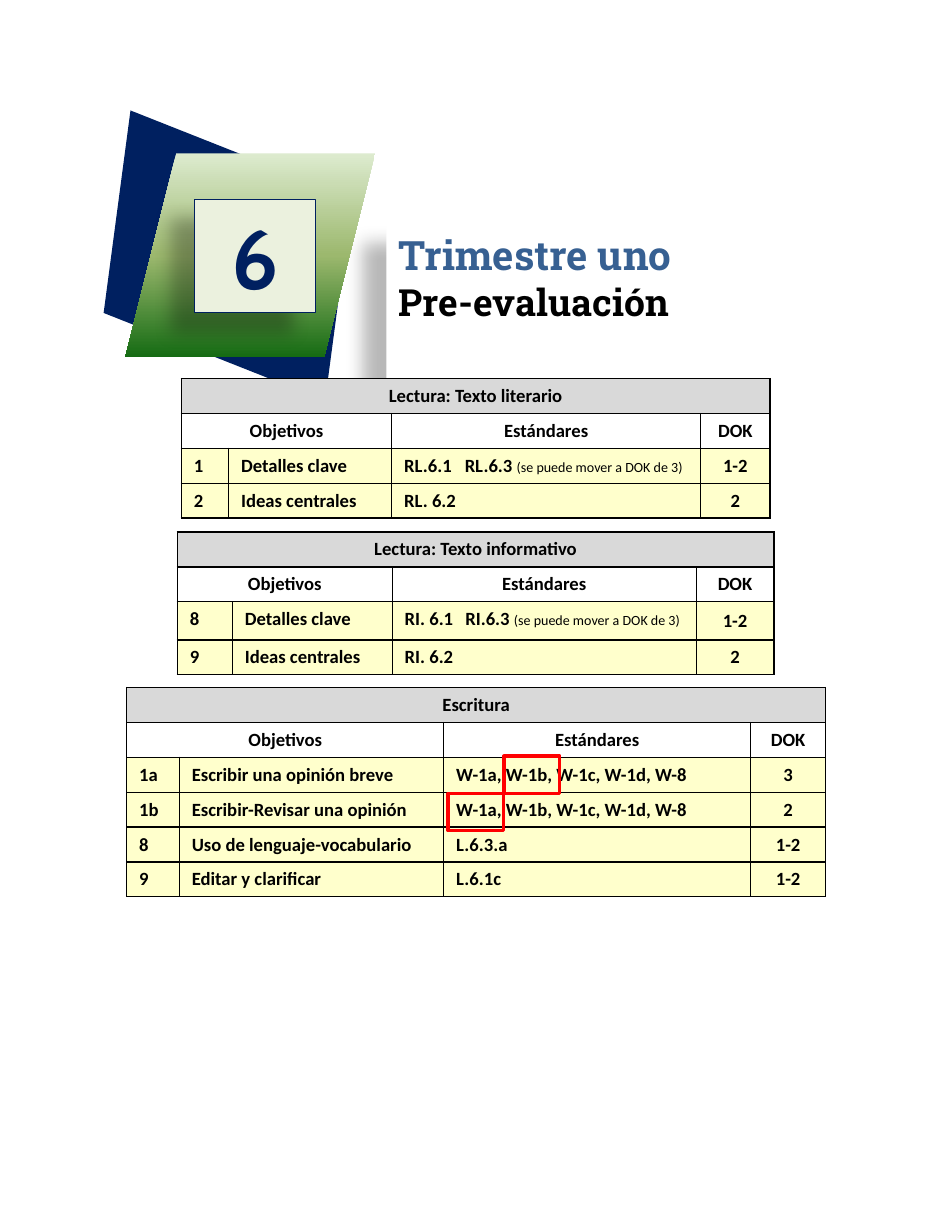
from copy import deepcopy

from lxml.etree import SubElement
from pptx import Presentation
from pptx.dml.color import RGBColor
from pptx.enum.shapes import MSO_SHAPE
from pptx.enum.text import MSO_ANCHOR, MSO_AUTO_SIZE, PP_ALIGN
from pptx.oxml.ns import qn
from pptx.util import Pt

HUE = {
    "navy": "002060", "pale": "EBF1DE", "blue": "376092", "black": "000000",
    "white": "FFFFFF", "gray": "D9D9D9", "cream": "FFFFCC", "red": "FF0000",
    "light": "DDEBCF", "mid": "9CB86E", "dark": "156B13",
}
ROW = 22.4
TAB = 39
NOTE = "(se puede mover a DOK de 3)"


def rgb(name):
    return RGBColor.from_string(HUE[name])


def paint(item, name):
    item.fill.solid()
    item.fill.fore_color.rgb = rgb(name)


def write(para, text, size, font, hue, bold=True):
    run = para.add_run()
    run.text = text
    run.font.size, run.font.name, run.font.bold = Pt(size), font, bold
    run.font.color.rgb = rgb(hue)


def pad(item, side, end):
    item.margin_left = item.margin_right = Pt(side)
    item.margin_top = item.margin_bottom = Pt(end)


def shade(shape):
    """Cast a soft shadow down and to the left."""
    shape.shadow.inherit = False
    effects = shape._element.spPr.find(qn("a:effectLst"))
    outer = SubElement(effects, qn("a:outerShdw"), blurRad=str(Pt(11.8)),
                       dist=str(Pt(19.7)), dir=str(141 * 60000),
                       algn="ctr", rotWithShape="0")
    color = SubElement(outer, qn("a:srgbClr"), val=HUE["black"])
    SubElement(color, qn("a:alpha"), val="28000")


def add_form(shapes, kind, box, fill=None, line=None, weight=1):
    form = shapes.add_shape(kind, *map(Pt, box))
    form.shadow.inherit = False
    if fill:
        paint(form, fill)
    else:
        form.fill.background()
    if line:
        form.line.color.rgb = rgb(line)
        form.line.width = Pt(weight)
    else:
        form.line.fill.background()
    return form


def blend(shape, names):
    """Fill from top to bottom through evenly spaced colours."""
    fill = shape.fill
    fill.gradient()
    fill.gradient_angle = 270
    stops = shape._element.spPr.find(qn("a:gradFill")).find(qn("a:gsLst"))
    while len(stops) < len(names):
        stops.append(deepcopy(stops[-1]))
    for i, (stop, name) in enumerate(zip(fill.gradient_stops, names)):
        stop.position = i / (len(names) - 1)
        stop.color.rgb = rgb(name)


def draw_badge(slide, box, grade):
    x, y, w, h = box
    parts = slide.shapes.add_group_shape().shapes
    back = add_form(parts, MSO_SHAPE.PARALLELOGRAM,
                    (x, y + 2, w - 2.2, h - 3.6), "navy")
    back.rotation = 21.6
    back._element.spPr.find(qn("a:xfrm")).set("flipH", "1")
    front = add_form(parts, MSO_SHAPE.PARALLELOGRAM,
                     (x + 26.6, y, w - 26.6, h), "white")
    blend(front, ("light", "mid", "dark"))
    plate = add_form(parts, MSO_SHAPE.RECTANGLE,
                     (x + 71.3, y + 29.5, 77.8, 72.7), "pale", "navy", 0.75)
    shade(plate)
    frame = plate.text_frame
    frame.vertical_anchor = MSO_ANCHOR.MIDDLE
    pad(frame, 7.2, 3.6)
    para = frame.paragraphs[0]
    para.alignment = PP_ALIGN.CENTER
    write(para, grade, 54, "Cabin", "navy")


def set_title(slide, box, lines):
    title = slide.shapes.title
    title.left, title.top, title.width, title.height = map(Pt, box)
    paint(title, "white")
    shade(title)
    frame = title.text_frame
    frame.word_wrap = True
    frame.auto_size = MSO_AUTO_SIZE.SHAPE_TO_FIT_TEXT
    frame.vertical_anchor = MSO_ANCHOR.TOP
    pad(frame, 8, 4)
    for i, (text, size, hue) in enumerate(lines):
        para = frame.add_paragraph() if i else frame.paragraphs[0]
        para.alignment = PP_ALIGN.LEFT
        write(para, text, size, "Roboto Slab", hue)


def style_cell(cell, hue):
    pad(cell, 8, 4)
    props = cell._tc.get_or_add_tcPr()
    for side in ("a:lnL", "a:lnR", "a:lnT", "a:lnB"):
        edge = SubElement(props, qn(side), w=str(Pt(1)))
        fill = SubElement(edge, qn("a:solidFill"))
        SubElement(fill, qn("a:srgbClr"), val=HUE["black"])
    paint(cell, hue)


def fill_cell(cell, text, center, note=""):
    para = cell.text_frame.paragraphs[0]
    para.alignment = PP_ALIGN.CENTER if center else PP_ALIGN.LEFT
    if "\t" in text:
        tabs = SubElement(para._p.get_or_add_pPr(), qn("a:tabLst"))
        SubElement(tabs, qn("a:tab"), pos=str(Pt(TAB)), algn="l")
    write(para, text, 12, "Calibri", "black")
    if note:
        write(para, note, 9, "Calibri", "black", False)


def add_goals(slide, spot, widths, name, goals, tall=None):
    """Table of goals; tall maps a row number to a special height."""
    rows = [(name, "", "", ""), ("Objetivos", "", "Estándares", "DOK"), *goals]
    heights = [(tall or {}).get(i, ROW) for i in range(len(rows))]
    box = (*spot, sum(widths), sum(heights))
    table = slide.shapes.add_table(len(rows), 4, *map(Pt, box)).table
    for col, width in zip(table.columns, widths):
        col.width = Pt(width)
    for i, (row, height) in enumerate(zip(rows, heights)):
        table.rows[i].height = Pt(height)
        for j, text in enumerate(row):
            cell = table.cell(i, j)
            style_cell(cell, ("gray", "white")[i] if i < 2 else "cream")
            if j == 3 and i > 1:
                cell.vertical_anchor = MSO_ANCHOR.MIDDLE
            if text:
                fill_cell(cell, text, i < 2 or j == 3,
                          NOTE if "\t" in text else "")
    for i, last in enumerate((3, 1)):
        table.cell(i, 0).merge(table.cell(i, last))


def main():
    deck = Presentation()
    deck.slide_width, deck.slide_height = Pt(612), Pt(792)
    slide = deck.slides.add_slide(deck.slide_layouts[5])

    draw_badge(slide, (54, 98.6, 187.2, 131), "6")
    set_title(slide, (248.4, 144, 224, 68.4), [
        ("Trimestre uno", 26, "blue"), ("Pre-evaluación", 24, "black")])

    add_goals(slide, (116.6, 243.4), (30.4, 104.8, 198.7, 44.6),
              "Lectura: Texto literario", [
        ("1", "Detalles clave", "RL.6.1\tRL.6.3 ", "1-2"),
        ("2", "Ideas centrales", "RL. 6.2", "2")])
    add_goals(slide, (114, 342), (35.4, 102.8, 195.4, 50),
              "Lectura: Texto informativo", [
        ("8", "Detalles clave", "RI. 6.1\tRI.6.3 ", "1-2"),
        ("9", "Ideas centrales", "RI. 6.2", "2")], {2: 24.5})
    skills = "W-1a, W-1b, W-1c, W-1d, W-8"
    add_goals(slide, (81.5, 442), (33.8, 170, 197.3, 48.2), "Escritura", [
        ("1a", "Escribir una opinión breve", skills, "3"),
        ("1b", "Escribir-Revisar una opinión", skills, "2"),
        ("8", "Uso de lenguaje-vocabulario", "L.6.3.a", "1-2"),
        ("9", "Editar y clarificar", "L.6.1c", "1-2")])

    for x, y in ((324, 486), (288, 510)):
        add_form(slide.shapes, MSO_SHAPE.RECTANGLE, (x, y, 36, 24),
                 line="red", weight=2)
    deck.save("out.pptx")


if __name__ == "__main__":
    main()
